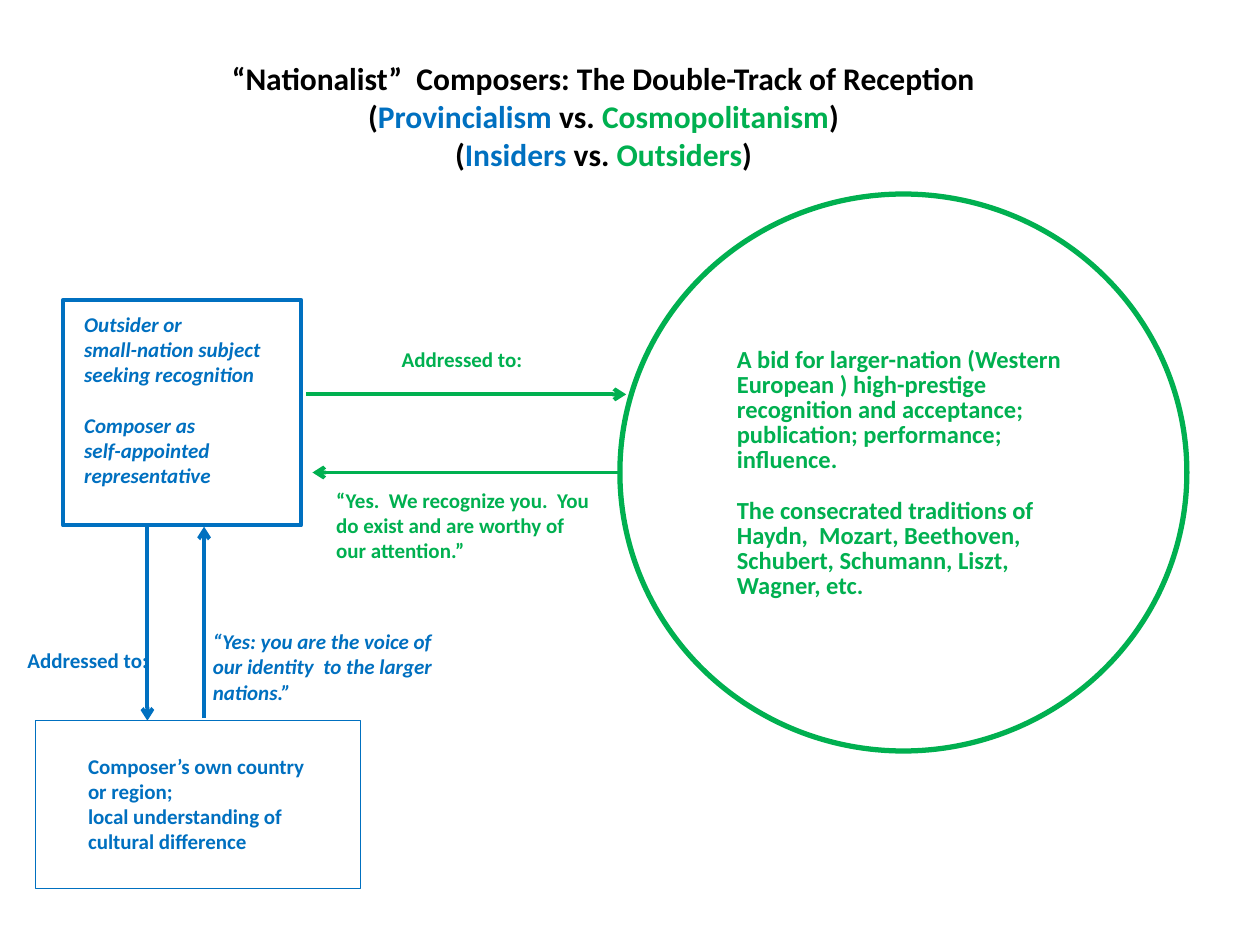
import pptx
import pptx.util
import pptx.dml.color
import pptx.enum.shapes
import pptx.enum.text
import pptx.oxml.ns
import lxml.etree

Inches, Pt = pptx.util.Inches, pptx.util.Pt
MSO_SHAPE = pptx.enum.shapes.MSO_SHAPE
COLORS = {"black": "000000", "blue": "0070C0", "green": "00B050"}


def rgb(name):
    return pptx.dml.color.RGBColor.from_string(COLORS[name])


def add_text(s, box, paragraphs, color, size=12, italic=False, spacing=None, gap_before=None):
    tf = s.shapes.add_textbox(*map(Inches, box)).text_frame
    tf.word_wrap = True
    for i, text in enumerate(paragraphs):
        p = tf.paragraphs[0] if i == 0 else tf.add_paragraph()
        p.text = text
        p.font.name = "Calibri"
        p.font.size = Pt(size)
        p.font.bold = True
        p.font.italic = italic
        p.font.color.rgb = rgb(color)
        if spacing:
            p.line_spacing = spacing
        if i == gap_before:
            p.space_before = Pt(14.5)


prs = pptx.Presentation()
prs.slide_width, prs.slide_height = Inches(10), Inches(7.5)
s = prs.slides.add_slide(prs.slide_layouts[6])

outlines = [
    (MSO_SHAPE.RECTANGLE, (0.5, 2.38, 1.89, 1.79), "blue", 2.25),
    (MSO_SHAPE.OVAL, (4.92, 1.54, 4.5, 4.42), "green", 3),
    (MSO_SHAPE.RECTANGLE, (0.28, 5.72, 2.58, 1.33), "blue", 0.75),
]
for kind, box, color, width in outlines:
    sp = s.shapes.add_shape(kind, *map(Inches, box))
    sp.shadow.inherit = False
    sp.fill.background()
    sp.line.color.rgb = rgb(color)
    sp.line.width = Pt(width)

arrows = [
    ((2.43, 3.13, 4.97, 3.13), "green"),
    ((4.92, 3.75, 2.48, 3.75), "green"),
    ((1.17, 4.18, 1.17, 5.72), "blue"),
    ((1.62, 5.7, 1.62, 4.18), "blue"),
]
for ends, color in arrows:
    line = s.shapes.add_connector(pptx.enum.shapes.MSO_CONNECTOR.STRAIGHT, *map(Inches, ends))
    line.line.color.rgb = rgb(color)
    line.line.width = Pt(2.25)
    ln = line.line._get_or_add_ln()
    lxml.etree.SubElement(ln, pptx.oxml.ns.qn("a:tailEnd"), type="arrow")
    lxml.etree.SubElement(line._element.spPr, pptx.oxml.ns.qn("a:effectLst"))

add_text(s, (0.57, 2.42, 1.75, 1.72), [
    "Outsider or",
    "small-nation subject seeking recognition",
    "Composer as",
    "self-appointed",
    "representative",
], "blue", italic=True, gap_before=2)
add_text(s, (5.75, 2.72, 3, 2.23), [
    "A bid for larger-nation (Western European ) high-prestige recognition and acceptance; "
    "publication; performance; influence.",
    "The consecrated traditions of Haydn,  Mozart, Beethoven, Schubert, Schumann, Liszt, Wagner, etc.",
], "green", size=14, spacing=0.85, gap_before=1)
add_text(s, (0.6, 5.93, 1.99, 0.91), [
    "Composer’s own country or region;",
    "local understanding of cultural difference",
], "blue")
add_text(s, (1.59, 4.94, 1.99, 0.71),
         ["“Yes: you are the voice of our identity  to the larger nations.”"], "blue", italic=True)
add_text(s, (2.57, 3.82, 2.25, 0.71),
         ["“Yes.  We recognize you.  You do exist and are worthy of our attention.”"], "green")
add_text(s, (0.12, 5.09, 1.44, 0.3), ["Addressed to:"], "blue")
add_text(s, (3.09, 2.7, 1.2, 0.3), ["Addressed to:"], "green")

title = [
    [("“Nationalist”  Composers: The Double-Track of Reception", "black")],
    [("(", "black"), ("Provincialism", "blue"), (" vs. ", "black"),
     ("Cosmopolitanism", "green"), (")", "black")],
    [("(", "black"), ("Insiders", "blue"), (" vs. ", "black"),
     ("Outsiders", "green"), (")", "black")],
]
# The closing marks take the colour of the title text.
tf = s.shapes.add_textbox(Inches(1.04), Inches(0.42), Inches(7.5), Inches(1.01)).text_frame
tf.word_wrap = True
for i, runs in enumerate(title):
    p = tf.paragraphs[0] if i == 0 else tf.add_paragraph()
    p.alignment = pptx.enum.text.PP_ALIGN.CENTER
    p.font.name = "Calibri"
    p.font.size = Pt(18)
    p.font.bold = True
    for text, color in runs:
        r = p.add_run()
        r.text = text
        r.font.color.rgb = rgb(color)

prs.save("out.pptx")
